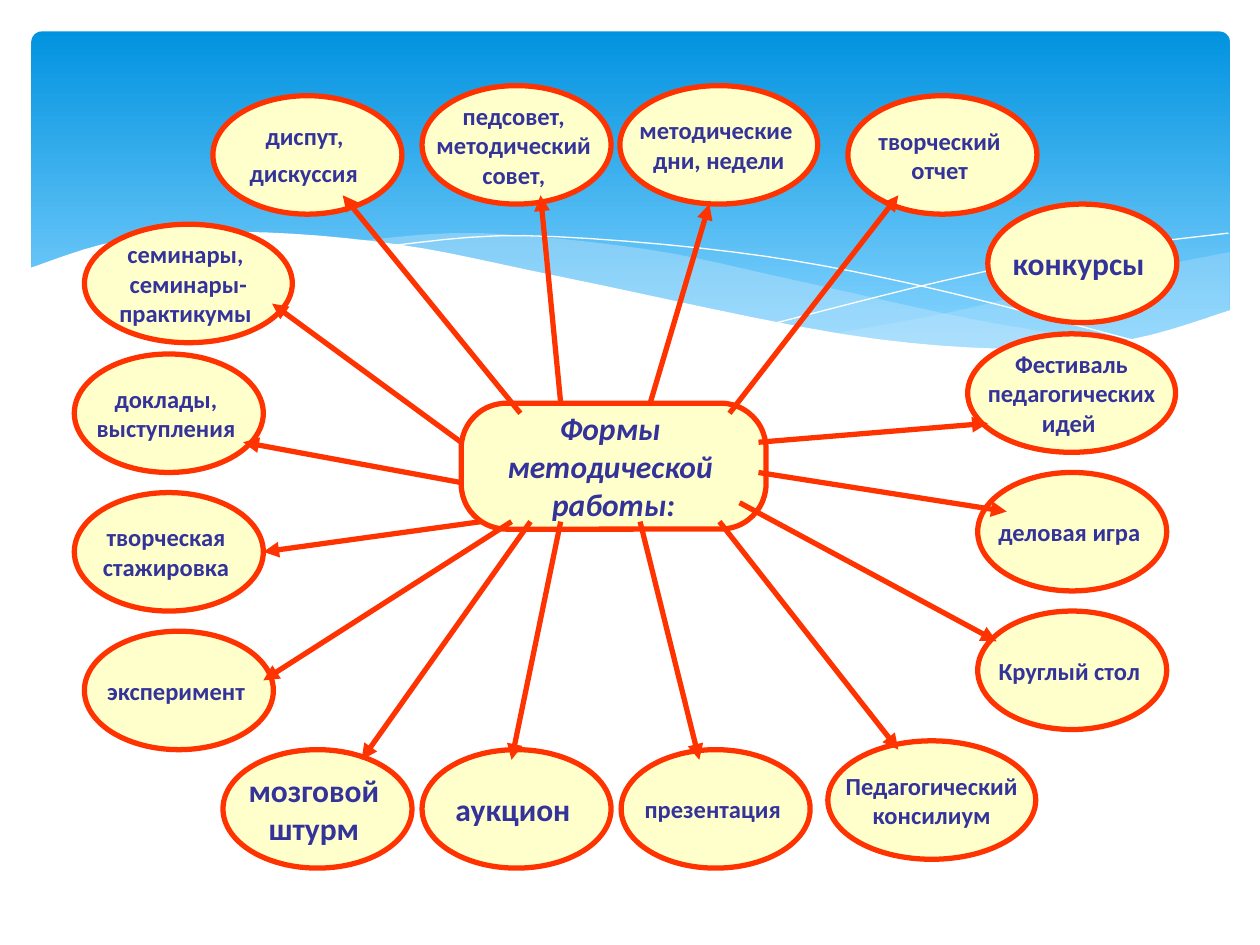
"""Build a one-slide mind map of the forms of methodical work."""
from dataclasses import dataclass
from typing import Optional

from lxml.etree import SubElement
from pptx import Presentation
from pptx.dml.color import RGBColor
from pptx.enum.shapes import MSO_CONNECTOR, MSO_SHAPE
from pptx.enum.text import MSO_ANCHOR, PP_ALIGN
from pptx.oxml.ns import qn
from pptx.shapes.autoshape import Shape
from pptx.slide import Slide
from pptx.util import Inches, Pt

COLORS = {
    "sky_top": "0293E0",
    "sky_bottom": "83D3FE",
    "mist": "C6E7FC",
    "white": "FFFFFF",
    "cream": "FFFFCC",
    "orange": "FF3300",
    "navy": "333399",
}
FONT = "Calibri"
TOPIC_HEIGHT = 0.94
STROKE = 3
CURVE_STEPS = 6

Point = tuple[float, float]


@dataclass(frozen=True)
class Wave:
    curves: tuple[tuple[Point, ...], ...]
    fill: Optional[str] = None
    opacity: int = 100


@dataclass(frozen=True)
class Topic:
    lines: tuple[str, ...]
    width: float = 1.5
    size: int = 14
    shift: float = 0
    tail_size: int = 0


@dataclass(frozen=True)
class TopicRun:
    left: float
    top: float
    topics: tuple[Topic, ...]
    across: float = 0
    down: float = 0


@dataclass(frozen=True)
class Rays:
    start_y: float
    start_xs: tuple[float, ...]
    tips: tuple[Point, ...]


WAVES = (
    Wave((((9.76, 2), (8.61, 2.23), (7.53, 2.48), (6.61, 2.65)),
          ((6.61, 2.65), (7.32, 2.74), (8.03, 2.78), (8.89, 2.72), (9.76, 2.47))), "mist", 29),
    Wave((((8.93, 2.73), (7.75, 2.54), (6.29, 2.22), (5.14, 1.98), (3.8, 1.85), (2.86, 1.91)),
          ((2.86, 1.91), (4.49, 2.22), (6.01, 2.55), (7.22, 2.74), (8.18, 2.78), (8.93, 2.73))),
         "mist", 40),
    Wave((((3.09, 1.95), (4.16, 1.87), (5.82, 2), (7.27, 2.26), (9.07, 2.72)),)),
    Wave((((6.13, 2.57), (7.48, 2.23), (8.66, 1.99), (9.75, 1.85)),)),
    Wave((((9.77, 2.46), (8.99, 2.69), (8.09, 2.77), (6.68, 2.65), (4.47, 2.2), (3.16, 1.94),
           (1.93, 1.84), (0.95, 1.91), (0.23, 2.13)),
          ((0.23, 3.29), (9.77, 3.29))), "white"),
)

TOPIC_RUNS = (
    TopicRun(0.67, 1.78, (Topic(("семинары, ", "семинары-", "практикумы "), 1.65),)),
    TopicRun(1.69, 0.76, (
        Topic(("диспут, ", "дискуссия"), tail_size=18),
        Topic(("творческий ", "отчет ")),
    ), across=5.04),
    TopicRun(3.35, 0.68, (
        Topic(("педсовет, ", "методический ", "совет, ")),
        Topic(("методические ", "дни, недели"), 1.57),
    ), across=1.57),
    TopicRun(1.77, 5.95, (
        Topic(("мозговой ", "штурм "), size=18),
        Topic(("аукцион ",), size=18),
        Topic(("презентация ",)),
    ), across=1.58),
    TopicRun(0.59, 2.81, (
        Topic(("доклады, ", "выступления ")),
        Topic(("творческая ", "стажировка ")),
        Topic(("эксперимент ",), shift=0.08),
    ), down=1.1),
    TopicRun(7.84, 1.62, (Topic(("конкурсы ",), size=18),)),
    TopicRun(7.76, 2.65, (
        Topic(("Фестиваль", " педагогических ", "идей "), 1.65, shift=-0.08),
        Topic(("деловая игра ",)),
        Topic(("Круглый стол ",)),
    ), down=1.1),
    TopicRun(6.57, 5.88, (Topic(("Педагогический", " консилиум "), 1.65),)),
)
CENTER = Topic(("Формы ", "методической ", "работы:"), 2.42, 18)

RAYS = (
    Rays(3.28, (4.13, 5.79), ((2.72, 1.55), (7.13, 1.55))),
    Rays(3.2, (4.45, 5.16), ((4.29, 1.55), (5.63, 1.62))),
    Rays(3.51, (3.66, 6.02), ((2.16, 2.41), (7.84, 3.36))),
    Rays(3.83, (3.66,), ((1.93, 3.51),)),
    Rays(4.14, (3.82, 4.06, 4.21, 4.45, 5.08, 5.71),
         ((2.09, 4.38), (2.09, 5.4), (2.87, 6.03), (4.06, 6.03), (5.55, 6.03), (7.13, 5.95))),
    Rays(3.99, (5.87,), ((7.91, 5.09),)),
    Rays(3.75, (6.02,), ((7.99, 4.06),)),
)


def rgb(name: str) -> RGBColor:
    return RGBColor.from_string(COLORS[name])


def smooth(knots: tuple[Point, ...]) -> list[Point]:
    padded = (knots[0], *knots, knots[-1])
    points = [knots[0]]
    for before, start, end, after in zip(padded, padded[1:], padded[2:], padded[3:]):
        for step in range(1, CURVE_STEPS + 1):
            t = step / CURVE_STEPS
            points.append(tuple(
                b + (c - a) * t / 2 + (2 * a - 5 * b + 4 * c - d) * t**2 / 2
                + (3 * b - a - 3 * c + d) * t**3 / 2
                for a, b, c, d in zip(before, start, end, after)))
    return points


def draw_sky(slide: Slide) -> None:
    sky = slide.shapes.add_shape(MSO_SHAPE.ROUNDED_RECTANGLE, Inches(0.25), Inches(0.25),
                                 Inches(9.51), Inches(2.7))
    sky.adjustments[0] = 0.03
    sky.shadow.inherit = False
    sky.line.fill.background()
    sky.fill.gradient()
    sky.fill.gradient_angle = 270
    stops = ((0, "sky_top"), (0.9, "sky_bottom"))
    for stop, (position, color) in zip(sky.fill.gradient_stops, stops):
        stop.position = position
        stop.color.rgb = rgb(color)


def draw_wave(slide: Slide, wave: Wave) -> None:
    first, *rest = [(Inches(x), Inches(y)) for curve in wave.curves for x, y in smooth(curve)]
    builder = slide.shapes.build_freeform(*first)
    builder.add_line_segments(rest, close=wave.fill is not None)
    band = builder.convert_to_shape()
    band.shadow.inherit = False
    if wave.fill is None:
        band.fill.background()
        band.line.color.rgb = rgb("white")
        band.line.width = Pt(0)
        return
    band.line.fill.background()
    band.fill.solid()
    band.fill.fore_color.rgb = rgb(wave.fill)
    if wave.opacity < 100:
        color = band._element.spPr.find(qn("a:solidFill"))[0]
        SubElement(color, qn("a:alpha"), val=str(wave.opacity * 1000))


def draw_topic(slide: Slide, topic: Topic, left: float, top: float,
               kind: MSO_SHAPE = MSO_SHAPE.OVAL, height: float = TOPIC_HEIGHT,
               italic: bool = False) -> Shape:
    bubble = slide.shapes.add_shape(kind, Inches(left + topic.shift), Inches(top),
                                    Inches(topic.width), Inches(height))
    bubble.shadow.inherit = False
    bubble.fill.solid()
    bubble.fill.fore_color.rgb = rgb("cream")
    bubble.line.color.rgb = rgb("orange")
    bubble.line.width = Pt(STROKE)
    frame = bubble.text_frame
    frame.word_wrap = False
    frame.vertical_anchor = MSO_ANCHOR.MIDDLE
    for index, line in enumerate(topic.lines):
        paragraph = frame.add_paragraph() if index else frame.paragraphs[0]
        paragraph.alignment = PP_ALIGN.CENTER
        pieces = [(line, topic.size, True)]
        if topic.tail_size and line == topic.lines[-1]:
            pieces.append((" ", topic.tail_size, False))
        for words, size, bold in pieces:
            run = paragraph.add_run()
            run.text = words
            run.font.name = FONT
            run.font.size = Pt(size)
            run.font.bold = bold
            run.font.italic = italic
            run.font.color.rgb = rgb("navy")
    return bubble


def draw_arrow(slide: Slide, start: Point, tip: Point) -> None:
    ray = slide.shapes.add_connector(MSO_CONNECTOR.STRAIGHT, *map(Inches, start + tip))
    ray.line.color.rgb = rgb("orange")
    ray.line.width = Pt(STROKE)
    SubElement(ray._element.spPr.find(qn("a:ln")), qn("a:tailEnd"), type="triangle")
    SubElement(ray._element.spPr, qn("a:effectLst"))


def main() -> None:
    deck = Presentation()
    deck.slide_width, deck.slide_height = Inches(10), Inches(7.5)
    slide = deck.slides.add_slide(deck.slide_layouts[6])
    draw_sky(slide)
    for wave in WAVES:
        draw_wave(slide, wave)
    for group in TOPIC_RUNS:
        for i, topic in enumerate(group.topics):
            draw_topic(slide, topic, group.left + i * group.across, group.top + i * group.down)
    hub = draw_topic(slide, CENTER, 3.66, 3.2, MSO_SHAPE.ROUNDED_RECTANGLE, 1, True)
    hub.adjustments[0] = 0.36
    for rays in RAYS:
        for x, tip in zip(rays.start_xs, rays.tips):
            draw_arrow(slide, (x, rays.start_y), tip)
    deck.save("out.pptx")


if __name__ == "__main__":
    main()
